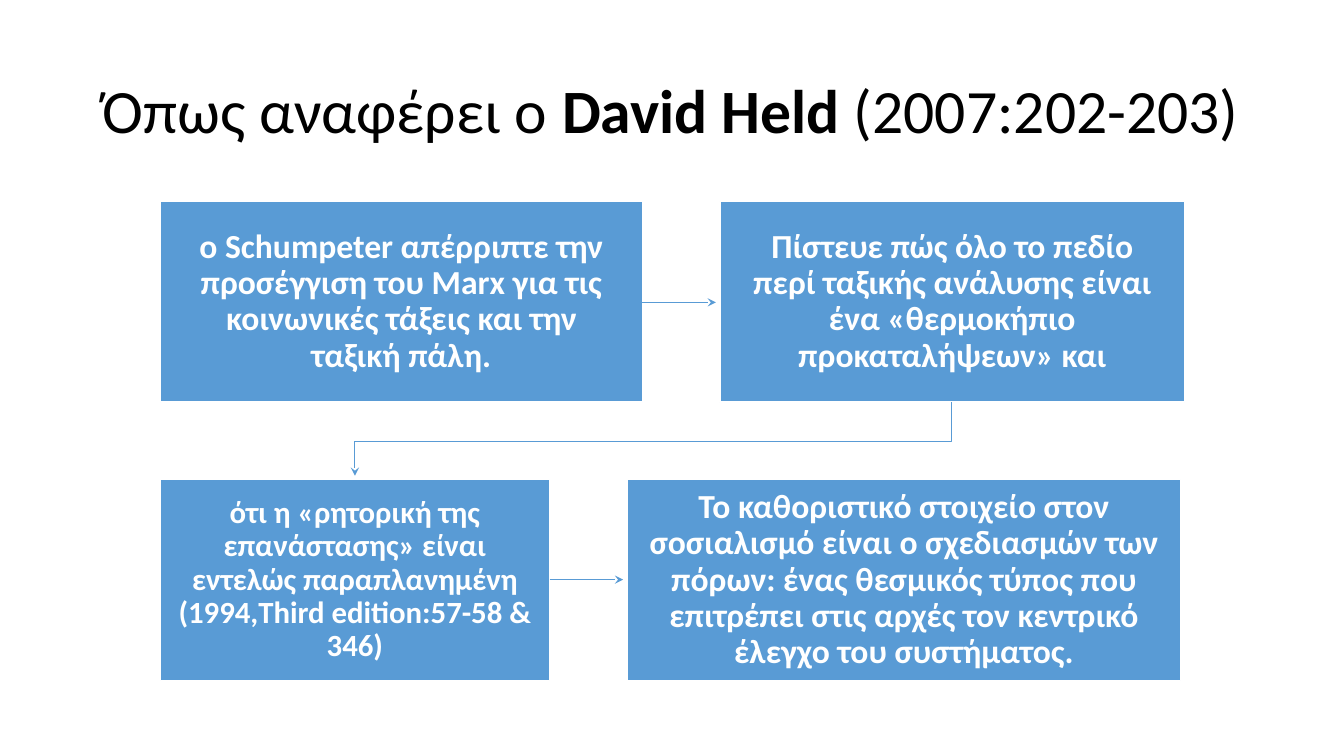
from lxml.etree import SubElement
from pptx import Presentation
from pptx.dml.color import RGBColor
from pptx.enum.shapes import MSO_CONNECTOR, MSO_SHAPE
from pptx.enum.text import MSO_ANCHOR, MSO_AUTO_SIZE, PP_ALIGN
from pptx.oxml.ns import qn
from pptx.util import Emu, Pt

BLUE = RGBColor(0x59, 0x9B, 0xD5)
WHITE = RGBColor(0xFF, 0xFF, 0xFF)
BLACK = RGBColor(0x00, 0x00, 0x00)
SCALE = 9144
TITLE_ONLY = 5

BOX_HEIGHT = 199
LEFT = 159
TOP_ROW, BOTTOM_ROW = 200, 476
GAP = 4


class SlideBuilder:
    """Draws the title, boxes and arrows of one slide in a shared style."""

    font = "Calibri"
    line_spacing = 0.9

    def __init__(self, presentation):
        self.slide = presentation.slides.add_slide(presentation.slide_layouts[TITLE_ONLY])

    def px(self, *lengths):
        return [Emu(length * SCALE) for length in lengths]

    def style_run(self, run, size, color, bold):
        run.font.name = self.font
        run.font.size = Pt(size)
        run.font.color.rgb = color
        run.font.bold = bold

    def title(self, parts, left, top, width, height):
        shape = self.slide.shapes.title
        shape.left, shape.top, shape.width, shape.height = self.px(left, top, width, height)
        frame = shape.text_frame
        frame.auto_size = MSO_AUTO_SIZE.NONE
        frame.vertical_anchor = MSO_ANCHOR.MIDDLE
        paragraph = frame.paragraphs[0]
        paragraph.alignment = PP_ALIGN.LEFT
        paragraph.line_spacing = self.line_spacing
        for text, bold in parts:
            run = paragraph.add_run()
            run.text = text
            self.style_run(run, 44, BLACK, bold)

    def box(self, text, left, top, width, size=24, inset=19):
        shape = self.slide.shapes.add_shape(
            MSO_SHAPE.RECTANGLE, *self.px(left, top, width, BOX_HEIGHT))
        shape.shadow.inherit = False
        shape.fill.solid()
        shape.fill.fore_color.rgb = BLUE
        shape.line.color.rgb = WHITE
        shape.line.width = Pt(1)
        frame = shape.text_frame
        frame.word_wrap = True
        frame.vertical_anchor = MSO_ANCHOR.MIDDLE
        frame.margin_left, frame.margin_top = self.px(inset, inset)
        frame.margin_right, frame.margin_bottom = self.px(inset, inset)
        frame.text = text
        paragraph = frame.paragraphs[0]
        paragraph.alignment = PP_ALIGN.CENTER
        paragraph.line_spacing = self.line_spacing
        self.style_run(paragraph.runs[0], size, WHITE, True)

    def style_arrow(self, shape):
        shape.line.color.rgb = BLUE
        shape.line.width = Pt(0.75)
        properties = shape._element.spPr
        SubElement(properties.find(qn("a:ln")), qn("a:tailEnd"), type="stealth")
        SubElement(properties, qn("a:effectLst"))

    def arrow(self, start, end, y):
        self.style_arrow(self.slide.shapes.add_connector(
            MSO_CONNECTOR.STRAIGHT, *self.px(start, y, end, y)))

    def bent_arrow(self, start, *points):
        builder = self.slide.shapes.build_freeform(*start, scale=SCALE)
        builder.add_line_segments(points, close=False)
        shape = builder.convert_to_shape()
        shape.fill.background()
        self.style_arrow(shape)


def main():
    presentation = Presentation()
    presentation.slide_width = Emu(1333 * SCALE)
    presentation.slide_height = Emu(750 * SCALE)
    builder = SlideBuilder(presentation)
    builder.title(
        [("Όπως αναφέρει ο ", False), ("David Held ", True), ("(2007:202-203)", False)],
        92, 40, 1150, 145)

    builder.box("ο Schumpeter απέρριπτε την προσέγγιση του Marx για τις κοινωνικές "
                "τάξεις και την ταξική πάλη.", LEFT, TOP_ROW, 478)
    builder.box("Πίστευε πώς όλο το πεδίο περί ταξικής ανάλυσης είναι ένα "
                "«θερμοκήπιο προκαταλήψεων» και", 714, TOP_ROW, 461)
    builder.box("ότι η «ρητορική της επανάστασης» είναι εντελώς παραπλανημένη "
                "(1994,Third edition:57-58 & 346)", LEFT, BOTTOM_ROW, 386, size=22, inset=17)
    builder.box("Το καθοριστικό στοιχείο στον σοσιαλισμό είναι ο σχεδιασμών των πόρων: "
                "ένας θεσμικός τύπος που επιτρέπει στις αρχές τον κεντρικό έλεγχο του "
                "συστήματος.", 622, BOTTOM_ROW, 549)

    builder.arrow(LEFT + 478, 714 - GAP, TOP_ROW + BOX_HEIGHT // 2 + 1)
    builder.arrow(LEFT + 386, 622 - GAP, BOTTOM_ROW + BOX_HEIGHT // 2)
    builder.bent_arrow((944, TOP_ROW + BOX_HEIGHT), (944, 438), (352, 438),
                       (352, BOTTOM_ROW - GAP))
    presentation.save("out.pptx")


if __name__ == "__main__":
    main()
